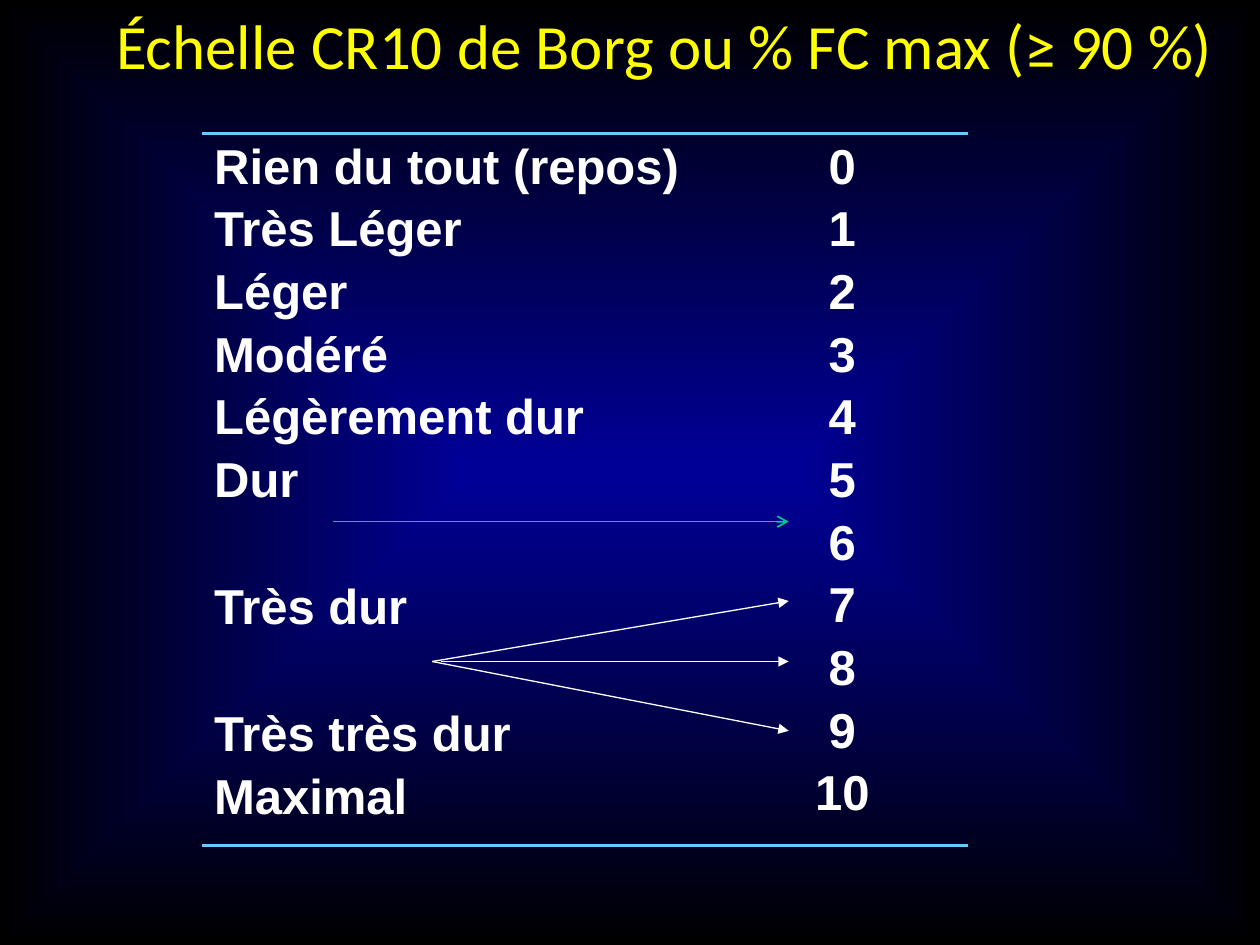
from lxml.etree import SubElement
from pptx import Presentation
from pptx.dml.color import RGBColor
from pptx.enum.shapes import MSO_CONNECTOR
from pptx.enum.text import MSO_ANCHOR, PP_ALIGN
from pptx.oxml import parse_xml
from pptx.oxml.ns import nsdecls, qn
from pptx.util import Inches, Pt

BLACK = RGBColor(0x00, 0x00, 0x00)
NAVY = RGBColor(0x00, 0x00, 0x99)
WHITE = RGBColor(0xFF, 0xFF, 0xFF)
YELLOW = RGBColor(0xFF, 0xFF, 0x00)
GREEN = RGBColor(0x00, 0xC8, 0x96)
SKY = RGBColor(0x66, 0xCC, 0xFF)

# Levels 6 and 8 have no label
SCALE = [
    ("Rien du tout (repos)", 0), ("Très Léger", 1), ("Léger", 2),
    ("Modéré", 3), ("Légèrement dur", 4), ("Dur", 5), ("Très dur", 7),
    ("Très très dur", 9), ("Maximal", 10),
]
LINE_PITCH = 36.8
LINE_GAP = 4.6


def fill_cell(cell, entries, alignment):
    """Write (text, level) entries, each on the line of its level."""
    frame = cell.text_frame
    previous = 0
    for index, (text, level) in enumerate(entries):
        para = frame.add_paragraph() if index else frame.paragraphs[0]
        para.alignment = alignment
        if index:
            skipped = level - previous - 1
            para.space_before = Pt(LINE_GAP + skipped * LINE_PITCH)
        previous = level
        span = para.add_run()
        span.text = text
        span.font.name = "Arial"
        span.font.size = Pt(28)
        span.font.bold = True
        span.font.color.rgb = WHITE


def set_borders(cell):
    """Rule the top and bottom of a cell and clear its sides."""
    properties = cell._tc.get_or_add_tcPr()
    for index, side in enumerate(("lnL", "lnR", "lnT", "lnB")):
        if side in ("lnT", "lnB"):
            paint = f'<a:solidFill><a:srgbClr val="{SKY}"/></a:solidFill>'
        else:
            paint = "<a:noFill/>"
        border = f'<a:{side} {nsdecls("a")} w="{Pt(2.25)}">{paint}</a:{side}>'
        properties.insert(index, parse_xml(border))


deck = Presentation()
deck.slide_width = Inches(10)
deck.slide_height = Inches(7.5)
page = deck.slides.add_slide(deck.slide_layouts[5])

# Background: gradient glowing from the centre
background = page.background.fill
background.gradient()
for stop, color in zip(background.gradient_stops, (NAVY, BLACK)):
    stop.color.rgb = color
gradient = page.element.find(".//" + qn("a:gradFill"))
gradient.remove(gradient.find(qn("a:lin")))
glow = SubElement(gradient, qn("a:path"), path="shape")
SubElement(glow, qn("a:fillToRect"), l="50000", t="50000", r="50000", b="50000")

# Title
title = page.shapes.title
title.left, title.top = Inches(0.67), Inches(0)
title.width, title.height = Inches(9.21), Inches(0.71)
title.text_frame.word_wrap = True
title.text_frame.vertical_anchor = MSO_ANCHOR.TOP
para = title.text_frame.paragraphs[0]
para.alignment = PP_ALIGN.CENTER
span = para.add_run()
span.text = "Échelle CR10 de Borg ou % FC max (≥ 90 %)"
span.font.name = "Calibri"
span.font.size = Pt(36)
span.font.color.rgb = YELLOW

# Scale table: labels on the left, levels on the right
table = page.shapes.add_table(
    1, 2, Inches(1.6), Inches(1.06), Inches(6.08), Inches(5.65)
).table
table.first_row = False
table.horz_banding = False
table.columns[0].width = Inches(4.09)
table.columns[1].width = Inches(1.99)
labels, levels = table.cell(0, 0), table.cell(0, 1)
fill_cell(labels, SCALE, PP_ALIGN.LEFT)
fill_cell(levels, [(str(level), level) for level in range(11)], PP_ALIGN.CENTER)
for cell in (labels, levels):
    cell.fill.background()
    set_borders(cell)

# Arrows from labels to levels
ARROWS = [
    (3.43, 5.25, 4.77, WHITE, 0.75, "triangle"),
    (3.43, 5.25, 5.8, WHITE, 0.75, "triangle"),
    (3.5, 5.25, 5.25, WHITE, 0.75, "triangle"),
    (2.64, 4.14, 4.14, GREEN, 1, "arrow"),
]
for start_x, start_y, end_y, color, weight, head in ARROWS:
    arrow = page.shapes.add_connector(
        MSO_CONNECTOR.STRAIGHT,
        Inches(start_x), Inches(start_y), Inches(6.26), Inches(end_y),
    )
    arrow.line.color.rgb = color
    arrow.line.width = Pt(weight)
    SubElement(arrow.line._get_or_add_ln(), qn("a:tailEnd"), type=head)
    SubElement(arrow._element.spPr, qn("a:effectLst"))

deck.save("out.pptx")
